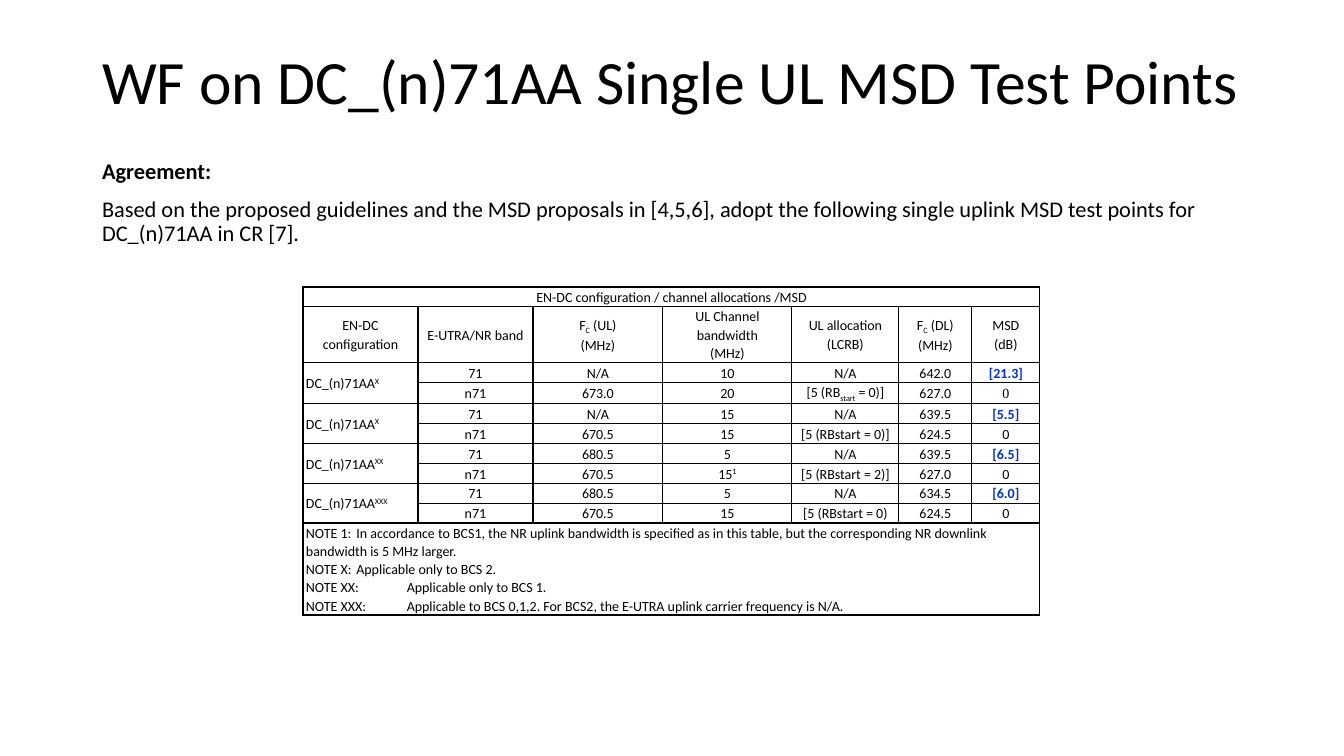
from dataclasses import dataclass

from lxml import etree
from pptx import Presentation
from pptx import util as u
from pptx.dml.color import RGBColor
from pptx.enum import text
from pptx.oxml.ns import qn


@dataclass(frozen=True)
class Theme:
    font: str = "Calibri"
    serif: str = "Times New Roman"
    ink: str = "000000"
    accent: str = "0033CC"
    title_size: int = 44
    body_size: int = 16
    table_size: int = 10
    border_width: int = 1


THEME = Theme()
PX_PER_INCH = 100.8
BASELINES = {"^": "30000", "_": "-25000"}

TITLE = "WF on DC_(n)71AA Single UL MSD Test Points"
AGREEMENT = (
    "Based on the proposed guidelines and the MSD proposals in [4,5,6], adopt the "
    "following single uplink MSD test points for DC_(n)71AA in CR [7]."
)
CAPTION = "EN-DC configuration / channel allocations /MSD"
HEADERS = [
    "EN-DC configuration", "E-UTRA/NR band", "F|_C| (UL)\n(MHz)",
    "UL Channel bandwidth\n(MHz)", "UL allocation (LCRB)",
    "F|_C| (DL)\n(MHz)", "MSD\n(dB)",
]
TEST_POINTS = [
    ("X", ["71", "N/A", "10", "N/A", "642.0", "[21.3]"],
     ["n71", "673.0", "20", "[5 (RB|_start| = 0)]", "627.0", "0"]),
    ("X", ["71", "N/A", "15", "N/A", "639.5", "[5.5]"],
     ["n71", "670.5", "15", "[5 (RBstart = 0)]", "624.5", "0"]),
    ("XX", ["71", "680.5", "5", "N/A", "639.5", "[6.5]"],
     ["n71", "670.5", "15|^1", "[5 (RBstart = 2)]", "627.0", "0"]),
    ("XXX", ["71", "680.5", "5", "N/A", "634.5", "[6.0]"],
     ["n71", "670.5", "15", "[5 (RBstart = 0)", "624.5", "0"]),
]
NOTES = "\n".join([
    "NOTE 1:\tIn accordance to BCS1, the NR uplink bandwidth is specified as in this "
    "table, but the corresponding NR downlink bandwidth is 5 MHz larger.",
    "NOTE X:\tApplicable only to BCS 2.",
    "NOTE XX:\tApplicable only to BCS 1.",
    "NOTE XXX:\tApplicable to BCS 0,1,2. For BCS2, the E-UTRA uplink carrier frequency is N/A.",
])
COLUMN_WIDTHS = [115, 115, 130, 129, 107, 73, 68]
ROW_HEIGHTS = [19, 56] + [20] * (2 * len(TEST_POINTS)) + [92]
NOTE_TAB = 68


def px(length):
    return u.Emu(round(length * 914400 / PX_PER_INCH))


def write_text(paragraph, content, size, font=THEME.font, color=THEME.ink, bold=False,
               align=text.PP_ALIGN.LEFT, spacing=0.9, before=0, tab=None):
    properties = paragraph._p.get_or_add_pPr()
    properties.set("marL", "0")
    properties.set("indent", "0")
    etree.SubElement(properties, qn("a:buNone"))
    if tab:
        tabs = etree.SubElement(properties, qn("a:tabLst"))
        etree.SubElement(tabs, qn("a:tab"), pos=str(px(tab)), algn="l")
    paragraph.alignment = align
    paragraph.line_spacing = spacing
    paragraph.space_before = u.Pt(before)
    for index, piece in enumerate(content.split("|")):
        scripted = index % 2 == 1
        run = paragraph.add_run()
        run.text = piece[1:] if scripted else piece
        run.font.size = u.Pt(size)
        run.font.name = font
        run.font.bold = bold
        run.font.color.rgb = RGBColor.from_string(color)
        if scripted:
            run._r.get_or_add_rPr().set("baseline", BASELINES[piece[0]])


def place(shape, box):
    shape.left, shape.top, shape.width, shape.height = map(px, box)
    shape.text_frame.word_wrap = True
    shape.text_frame.auto_size = text.MSO_AUTO_SIZE.NONE


def build_title(shape, box):
    place(shape, box)
    shape.text_frame.vertical_anchor = text.MSO_ANCHOR.MIDDLE
    write_text(shape.text_frame.paragraphs[0], TITLE, THEME.title_size)


def build_agreement(shape, box):
    place(shape, box)
    frame = shape.text_frame
    frame.vertical_anchor = text.MSO_ANCHOR.TOP
    write_text(frame.paragraphs[0], "Agreement:", THEME.body_size, bold=True)
    write_text(frame.add_paragraph(), AGREEMENT, THEME.body_size, before=10)


def style_cell(cell):
    cell.margin_left = cell.margin_right = px(3)
    cell.margin_top, cell.margin_bottom = px(1), 0
    properties = cell._tc.get_or_add_tcPr()
    for side in ("lnL", "lnR", "lnT", "lnB"):
        line = etree.SubElement(properties, qn(f"a:{side}"), w=str(u.Pt(THEME.border_width)))
        fill = etree.SubElement(line, qn("a:solidFill"))
        etree.SubElement(fill, qn("a:srgbClr"), val=THEME.ink)
    cell.fill.background()


def write_cell(cell, content, anchor=text.MSO_ANCHOR.MIDDLE,
               align=text.PP_ALIGN.CENTER, **style):
    cell.vertical_anchor = anchor
    frame = cell.text_frame
    for index, line in enumerate(content.split("\n")):
        paragraph = frame.add_paragraph() if index else frame.paragraphs[0]
        write_text(paragraph, line, THEME.table_size, align=align, spacing=1.07, **style)


def build_test_points(slide, left, top):
    row_count, column_count = len(ROW_HEIGHTS), len(COLUMN_WIDTHS)
    box = map(px, (left, top, sum(COLUMN_WIDTHS), sum(ROW_HEIGHTS)))
    table = slide.shapes.add_table(row_count, column_count, *box).table
    table.first_row = table.horz_banding = False
    for column, width in zip(table.columns, COLUMN_WIDTHS):
        column.width = px(width)
    for row, height in zip(table.rows, ROW_HEIGHTS):
        row.height = px(height)
        for cell in row.cells:
            style_cell(cell)
            cell.text_frame.paragraphs[0].font.size = u.Pt(THEME.table_size)

    last_row, last_column = row_count - 1, column_count - 1
    for row in (0, last_row):
        table.cell(row, 0).merge(table.cell(row, last_column))
    write_cell(table.cell(0, 0), CAPTION, anchor=text.MSO_ANCHOR.TOP)
    for column, header in enumerate(HEADERS):
        write_cell(table.cell(1, column), header)

    for group, (suffix, *bands) in enumerate(TEST_POINTS):
        first = 2 + 2 * group
        table.cell(first, 0).merge(table.cell(first + 1, 0))
        write_cell(table.cell(first, 0), f"DC_(n)71AA|^{suffix}", align=text.PP_ALIGN.LEFT)
        for row, values in enumerate(bands, first):
            for column, value in enumerate(values, 1):
                style = {}
                if column == last_column and value.startswith("["):
                    style = {"color": THEME.accent, "bold": True}
                elif column == last_column and group == 0:
                    style = {"font": THEME.serif}
                write_cell(table.cell(row, column), value, **style)

    write_cell(table.cell(last_row, 0), NOTES, anchor=text.MSO_ANCHOR.TOP,
               align=text.PP_ALIGN.LEFT, tab=NOTE_TAB)


def main():
    presentation = Presentation()
    presentation.slide_width, presentation.slide_height = px(1344), px(756)
    slide = presentation.slides.add_slide(presentation.slide_layouts[1])
    build_title(slide.shapes.title, (92, 40, 1160, 90))
    build_agreement(slide.placeholders[1], (92, 155, 1190, 514))
    build_test_points(slide, 303, 287)
    presentation.save("out.pptx")


if __name__ == "__main__":
    main()
